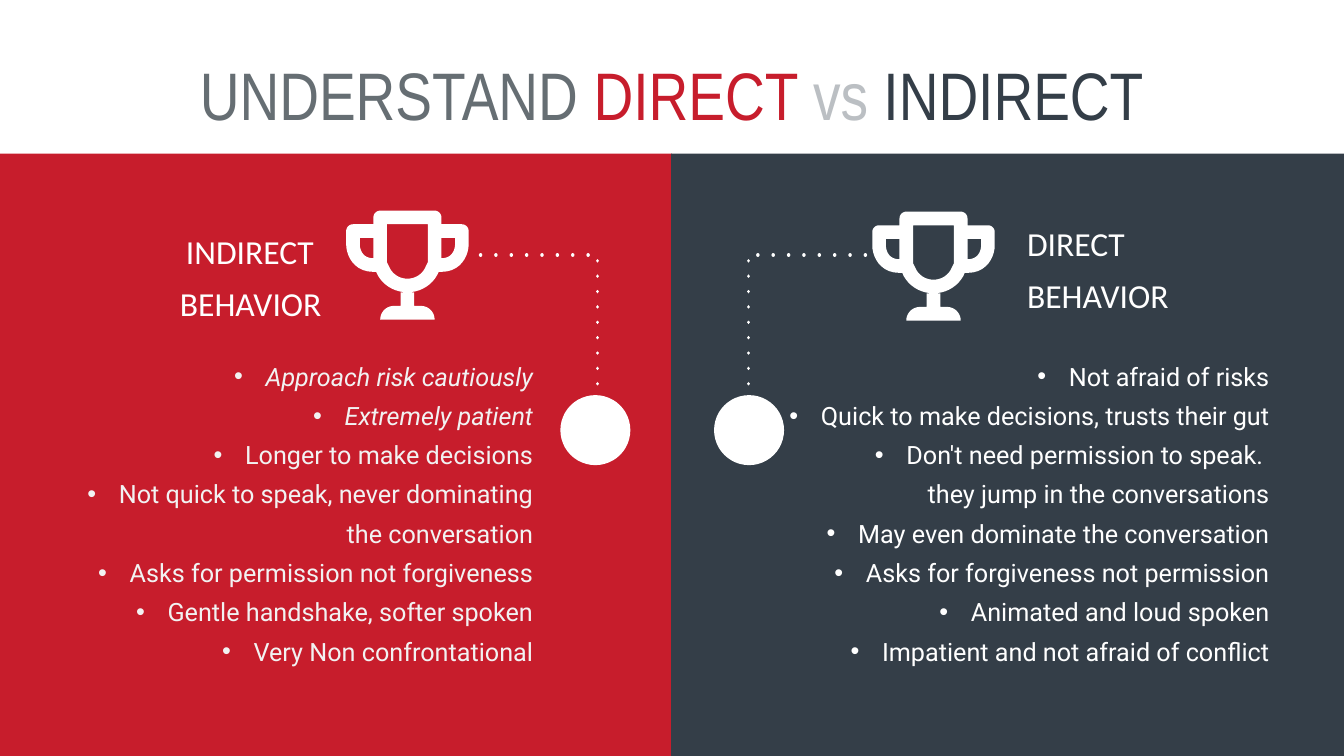
from lxml.etree import SubElement
from pptx import Presentation
from pptx.dml.color import RGBColor
from pptx.enum.shapes import MSO_SHAPE as Shape
from pptx.enum.text import PP_ALIGN as Align
from pptx.oxml.ns import qn
from pptx.util import Pt

RED = RGBColor(0xC7, 0x1D, 0x2C)
SLATE = RGBColor(0x34, 0x3E, 0x48)
GREY = RGBColor(0x66, 0x6E, 0x73)
SILVER = RGBColor(0xBB, 0xBF, 0xC3)
PALE = RGBColor(0xF2, 0xF2, 0xF2)
WHITE = RGBColor(0xFF, 0xFF, 0xFF)

prs = Presentation()
prs.slide_width, prs.slide_height = Pt(1920.24), Pt(1080)
slide = prs.slides.add_slide(prs.slide_layouts[6])
shapes = slide.shapes


def outline(steps):
    """Turn corners (x, y) and Bezier steps (x1, y1, x2, y2, x, y) into points."""
    points = [steps[0]]
    for step in steps[1:]:
        if len(step) == 2:
            points.append(step)
            continue
        x0, y0 = points[-1]
        x1, y1, x2, y2, x3, y3 = step
        for t in [i / 10 for i in range(1, 11)]:
            a, b, c, d = (1 - t) ** 3, 3 * t * (1 - t) ** 2, 3 * t * t * (1 - t), t ** 3
            points.append((a * x0 + b * x1 + c * x2 + d * x3,
                           a * y0 + b * y1 + c * y2 + d * y3))
    return points


def add_text(left, top, width, height, lines, align, font, size, color):
    frame = shapes.add_textbox(Pt(left), Pt(top), Pt(width), Pt(height)).text_frame
    frame.word_wrap = True
    frame.margin_left = frame.margin_right = frame.margin_top = frame.margin_bottom = 0
    frame.text = "\n".join(lines)
    for line in frame.paragraphs:
        line.alignment, line.line_spacing = align, 1.3
        for run in line.runs:
            run.font.name, run.font.size = font, Pt(size)
            run.font.color.rgb = color
    return frame.paragraphs


# Two background halves
for left, width, color in [(0, 960, RED), (959, 968.4, SLATE)]:
    half = shapes.add_shape(Shape.RECTANGLE, Pt(left), Pt(219.6), Pt(width), Pt(860.4))
    half.shadow.inherit = False
    half.fill.solid()
    half.fill.fore_color.rgb = color
    half.line.fill.background()

# Title
title = shapes.add_textbox(Pt(156.24), Pt(72), Pt(1607), Pt(116.64)).text_frame
title.word_wrap = True
title.paragraphs[0].alignment = Align.CENTER
for words, color in [("UNDERSTAND", GREY), (" DIRECT ", RED),
                     ("vs ", SILVER), ("INDIRECT", SLATE)]:
    run = title.paragraphs[0].add_run()
    run.text = words
    run.font.name, run.font.size = "Arial Narrow", Pt(96)
    run.font.color.rgb = color

# Dotted links from trophy to circle
for corner_x, end_x in [(853.92, 686.16), (1069.2, 1236.96)]:
    builder = shapes.build_freeform(Pt(corner_x), Pt(570.24))
    builder.add_line_segments([(Pt(corner_x), Pt(364.32)), (Pt(end_x), Pt(364.32))],
                              close=False)
    link = builder.convert_to_shape()
    link.shadow.inherit = False
    link.fill.background()
    link.line.color.rgb = WHITE
    link.line.width = Pt(5)
    ln = link.line._get_or_add_ln()
    ln.set("cap", "rnd")
    dash = SubElement(ln, qn("a:custDash"))
    SubElement(dash, qn("a:ds"), d="100000", sp="340000")

# Circles
for left in (800.64, 1020.24):
    circle = shapes.add_shape(Shape.OVAL, Pt(left), Pt(564.48), Pt(100), Pt(100))
    circle.shadow.inherit = False
    circle.fill.solid()
    circle.fill.fore_color.rgb = WHITE
    circle.line.fill.background()

# Trophies: right halves on an 18 x 16 grid around the centre line, then mirrored
CUP = outline([(0, 0), (4, 0), (4.55, 0, 5, 0.45, 5, 1), (5, 2), (8, 2),
               (8.55, 2, 9, 2.45, 9, 3), (9, 5), (9, 6.55, 7.9, 9, 5, 9), (4.6, 9),
               (3.85, 10.8, 2.05, 12, 0, 12)])
BOWL = outline([(0, 2), (3, 2), (3, 7.6), (2.7, 8.2), (2.25, 9.3, 1.2, 10, 0, 10)])
FOOT = outline([(0, 12), (1, 12), (1, 14), (2, 14), (3.1, 14, 4, 14.9, 4, 16), (0, 16)])
HANDLE = outline([(5, 4), (7, 4), (7, 5), (7, 5.3, 6.85, 7, 5, 7)])
contours = [half + [(-x, y) for x, y in reversed(half)] for half in (CUP, BOWL, FOOT)]
contours += [HANDLE, [(-x, y) for x, y in HANDLE]]
GRID = 9.72

for center, top in [(582.12, 300.96), (1333.8, 302.4)]:
    placed = [[(Pt(center + x * GRID), Pt(top + y * GRID)) for x, y in contour]
              for contour in contours]
    builder = shapes.build_freeform(*placed[0][0])
    builder.add_line_segments(placed[0][1:])
    for contour in placed[1:]:
        builder.move_to(*contour[0])
        builder.add_line_segments(contour[1:])
    trophy = builder.convert_to_shape()
    trophy.shadow.inherit = False
    trophy.fill.solid()
    trophy.fill.fore_color.rgb = WHITE
    trophy.line.fill.background()

# Headings
add_text(79.2, 312.48, 380.16, 145.44, ["INDIRECT ", "BEHAVIOR"],
         Align.RIGHT, "Calibri", 48, WHITE)
add_text(1467.36, 300.96, 380.16, 145.44, ["DIRECT", "BEHAVIOR"],
         Align.LEFT, "Calibri", 48, WHITE)

# Behaviour lists
indirect = add_text(105.84, 502.56, 655.92, 491.76, [
    "Approach risk cautiously",
    "Extremely patient",
    "Longer to make decisions",
    "Not quick to speak, never dominating the conversation",
    "Asks for permission not forgiveness",
    "Gentle handshake, softer spoken",
    "Very Non confrontational",
], Align.RIGHT, "Roboto", 36, PALE)
direct = add_text(1124.64, 502.56, 689.04, 547.92, [
    "Not afraid of risks",
    "Quick to make decisions, trusts their gut",
    "Don't need permission to speak. ",
    "they jump in the conversations",
    "May even dominate the conversation",
    "Asks for forgiveness not permission",
    "Animated and loud spoken",
    "Impatient and not afraid of conflict",
], Align.RIGHT, "Roboto", 36, WHITE)

for line in indirect[:2]:
    line.runs[0].font.italic = True

# Bullets on every line but the one that continues its neighbour
for line in indirect + direct[:3] + direct[4:]:
    props = line._p.get_or_add_pPr()
    props.set("marL", str(Pt(45)))
    props.set("indent", str(-Pt(45)))
    SubElement(props, qn("a:buFont"), typeface="Arial")
    SubElement(props, qn("a:buChar"), char="•")

prs.save("out.pptx")
